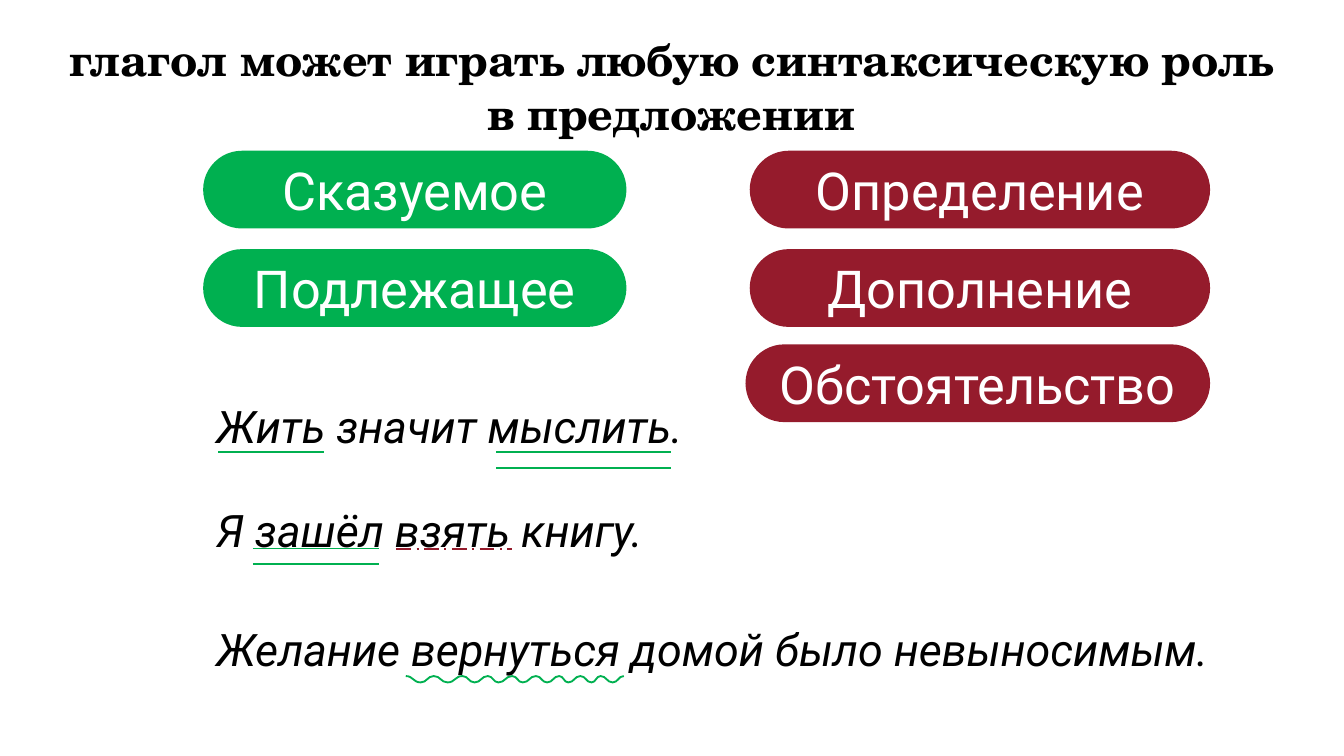
import itertools
from dataclasses import dataclass

import pptx
import pptx.dml.color
import pptx.enum.dml
import pptx.enum.shapes
import pptx.enum.text
import pptx.oxml.ns
import pptx.util
from lxml import etree

Cm, Pt = pptx.util.Cm, pptx.util.Pt
RGB = pptx.dml.color.RGBColor.from_string
ANCHOR, ALIGN = pptx.enum.text.MSO_ANCHOR, pptx.enum.text.PP_ALIGN
SHAPE = pptx.enum.shapes.MSO_SHAPE
qn = pptx.oxml.ns.qn


@dataclass(frozen=True)
class Theme:
    green: str = "00B050"
    red: str = "951B2C"
    black: str = "000000"
    white: str = "FFFFFF"
    title_font: str = "TeX Gyre Schola"
    body_font: str = "Roboto"
    title_size: int = 24
    role_size: int = 28
    example_size: int = 24
    line: float = 1


THEME = Theme()

TITLE = "глагол может играть любую синтаксическую роль в предложении"
# Column: colour, right edge, list of (role, width); lengths in cm
ROLE_COLUMNS = [
    (THEME.green, 11.84, [("Сказуемое", 8), ("Подлежащее", 8)]),
    (THEME.red, 22.87, [("Определение", 8.7), ("Дополнение", 8.7),
                        ("Обстоятельство", 8.78)]),
]
ROLE_TOPS, ROLE_HEIGHT = (2.85, 4.71, 6.51), 1.47

# Sentence, top, width
EXAMPLES = [
    ("Жить значит мыслить.", 7.28, 13.94),
    ("Я зашёл взять книгу.", 9.25, 18.47),
    ("Желание вернуться домой было невыносимым.", 11.49, 22.23),
]
EXAMPLE_LEFT, EXAMPLE_HEIGHT = 3.84, 1.4

SUBJECT = (4.12, 6.12, 8.55)  # start, end, y
OBJECT = (7.49, 9.68, 10.38)
PREDICATES = [(9.38, 12.68, (8.55, 8.84)), (4.78, 7.17, (10.37, 10.66))]
# Crests and troughs alternate at these x positions
WAVE_XS = (7.67, 7.95, 8.2, 8.46, 8.74, 8.97, 9.22, 9.42, 9.68, 9.88,
           10.13, 10.34, 10.57, 10.74, 10.97, 11.18, 11.35, 11.58, 11.79)
WAVE_YS = (12.78, 12.9)


def format_text(shape, text, font, size, color, align, anchor, bold=False, italic=False):
    tf = shape.text_frame
    tf.text = text
    tf.word_wrap = True
    tf.auto_size = pptx.enum.text.MSO_AUTO_SIZE.NONE
    tf.vertical_anchor = anchor
    p = tf.paragraphs[0]
    p.alignment = align
    f = p.runs[0].font
    f.name, f.size, f.bold, f.italic = font, Pt(size), bold, italic
    f.color.rgb = RGB(color)
    return p


def add_title(s):
    title = s.shapes.title
    title.left, title.top, title.width, title.height = map(Cm, (0.98, 0.45, 23.42, 2.31))
    format_text(title, TITLE, THEME.title_font, THEME.title_size, THEME.black,
                ALIGN.CENTER, ANCHOR.BOTTOM, bold=True)


def add_roles(s):
    for color, right, roles in ROLE_COLUMNS:
        for (role, width), top in zip(roles, ROLE_TOPS):
            sp = s.shapes.add_shape(SHAPE.ROUNDED_RECTANGLE, Cm(right - width), Cm(top),
                                    Cm(width), Cm(ROLE_HEIGHT))
            sp.adjustments[0] = 0.5
            sp.shadow.inherit = False
            sp.fill.solid()
            sp.fill.fore_color.rgb = RGB(color)
            sp.line.fill.background()
            format_text(sp, role, THEME.body_font, THEME.role_size, THEME.white,
                        ALIGN.CENTER, ANCHOR.MIDDLE)


def add_examples(s):
    for sentence, top, width in EXAMPLES:
        box = s.shapes.add_textbox(Cm(EXAMPLE_LEFT), Cm(top), Cm(width), Cm(EXAMPLE_HEIGHT))
        p = format_text(box, sentence, THEME.body_font, THEME.example_size, THEME.black,
                        ALIGN.LEFT, ANCHOR.BOTTOM, italic=True)
        p.line_spacing = 1.5


def add_underline(shapes, start, end, y, color=THEME.green):
    line = shapes.add_connector(pptx.enum.shapes.MSO_CONNECTOR.STRAIGHT,
                                Cm(start), Cm(y), Cm(end), Cm(y))
    line.line.color.rgb = RGB(color)
    line.line.width = Pt(THEME.line)
    etree.SubElement(line._element.spPr, qn("a:effectLst"))
    return line


def round_segments(shape):
    """Turn each straight segment into a curve that is level at both ends."""
    points = [(int(pt.get("x")), int(pt.get("y"))) for pt in shape._element.iter(qn("a:pt"))]
    segments = list(shape._element.iter(qn("a:lnTo")))
    for segment, ((x0, y0), (x1, y1)) in zip(segments, itertools.pairwise(points)):
        middle = (x0 + x1) // 2
        curve = etree.Element(qn("a:cubicBezTo"))
        for x, y in ((middle, y0), (middle, y1), (x1, y1)):
            etree.SubElement(curve, qn("a:pt"), x=str(x), y=str(y))
        segment.getparent().replace(segment, curve)


def add_wave(s):
    points = [(Cm(x), Cm(y)) for x, y in zip(WAVE_XS, itertools.cycle(WAVE_YS))]
    builder = s.shapes.build_freeform(*points[0])
    builder.add_line_segments(points[1:], close=False)
    wave = builder.convert_to_shape()
    round_segments(wave)
    wave.shadow.inherit = False
    wave.fill.background()
    wave.line.color.rgb = RGB(THEME.green)
    wave.line.width = Pt(THEME.line)


def add_marks(s):
    add_underline(s.shapes, *SUBJECT)
    dashed = add_underline(s.shapes, *OBJECT, color=THEME.red)
    dashed.line.dash_style = pptx.enum.dml.MSO_LINE.LONG_DASH_DOT
    for start, end, levels in PREDICATES:
        group = s.shapes.add_group_shape()
        for y in levels:
            add_underline(group.shapes, start, end, y)
    add_wave(s)


def main():
    prs = pptx.Presentation()
    prs.slide_width, prs.slide_height = Cm(25.4), Cm(14.29)
    s = prs.slides.add_slide(prs.slide_layouts[5])
    add_title(s)
    add_roles(s)
    add_examples(s)
    add_marks(s)
    prs.save("out.pptx")


if __name__ == "__main__":
    main()
